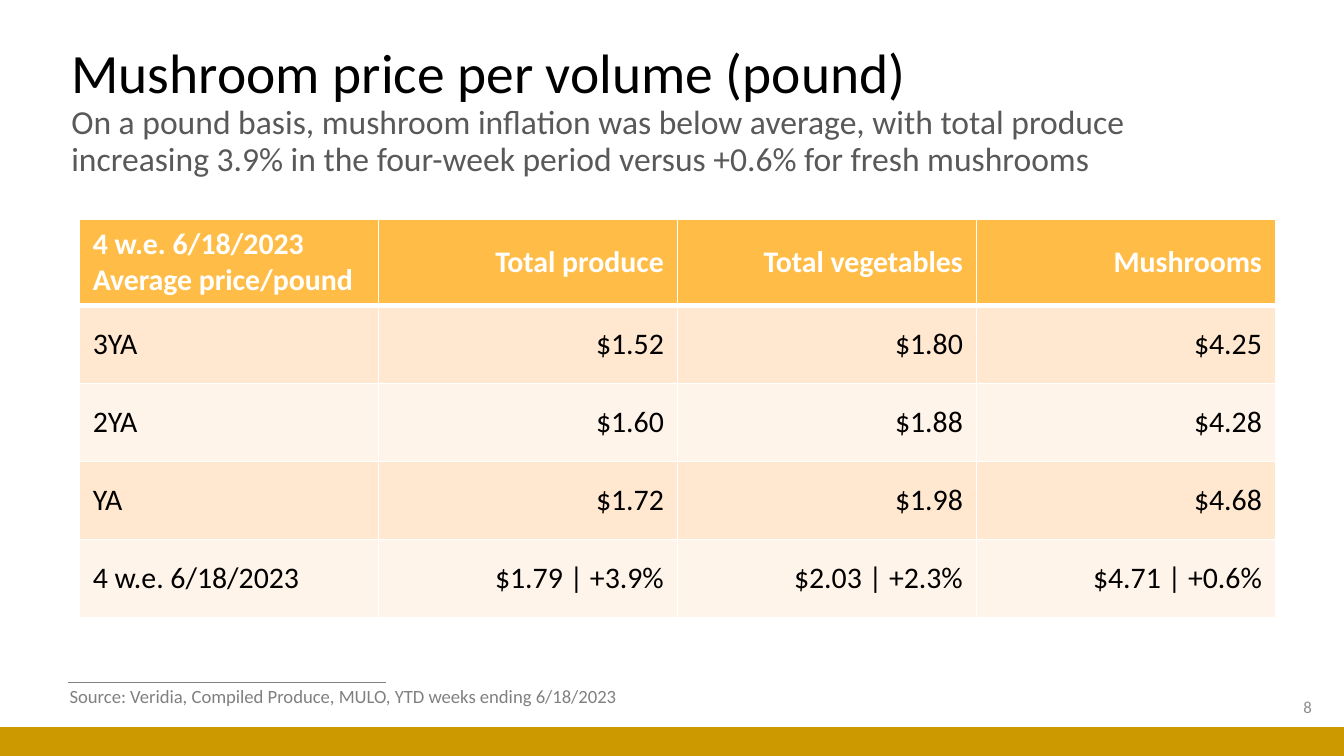
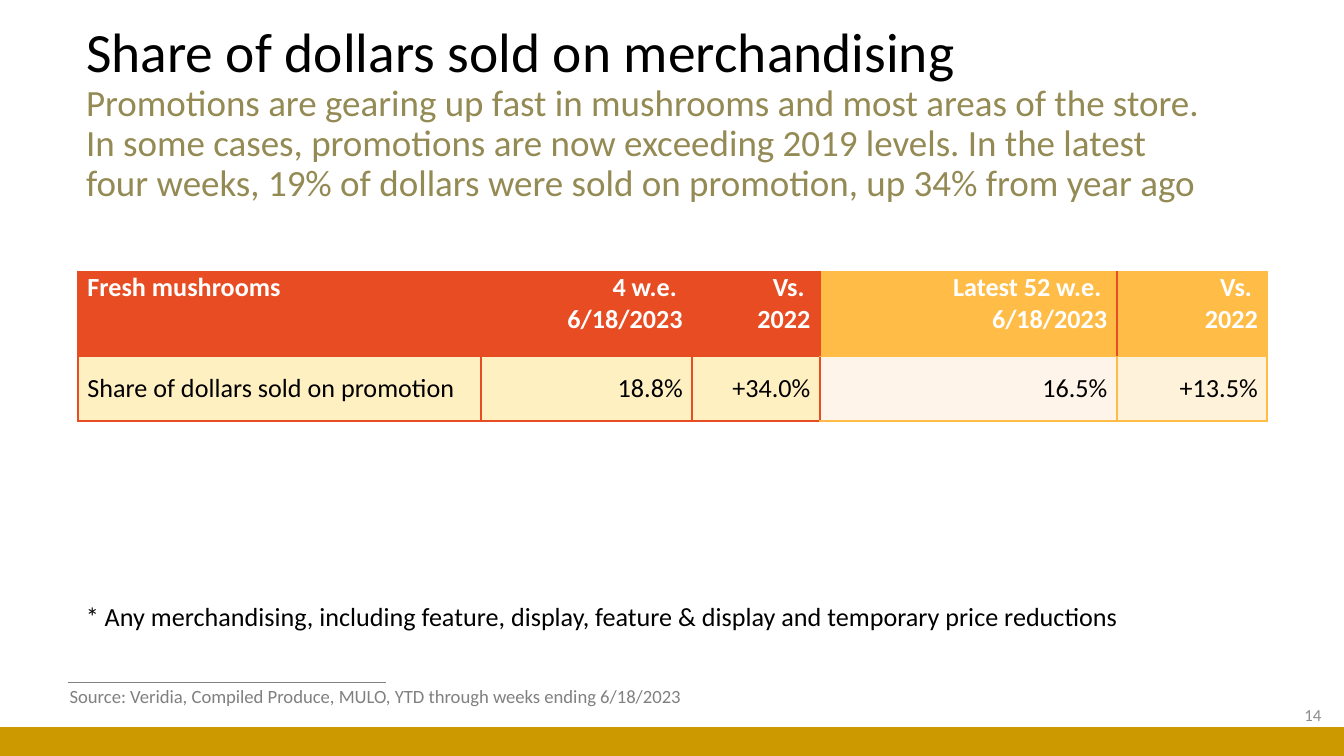
from lxml import etree
from pptx import Presentation
from pptx import util as u
from pptx.dml import color
from pptx.enum import shapes, text
from pptx.oxml import ns

FONT = "Calibri"
COLORS = {
    "black": "000000",
    "white": "FFFFFF",
    "source": "808080",
    "number": "8C8C8C",
    "band": "CC9900",
    "subtitle": "595959",
    "olive": "948A54",
    "amber": "FFBD47",
    "red": "E84C22",
    "peach": "FFE8CF",
    "cream": "FFF4E9",
    "yellow": "FFF0C2",
    "sand": "FFF2DA",
}
TITLE_SIZE = 29.7
LEFT, RIGHT = text.PP_ALIGN.LEFT, text.PP_ALIGN.RIGHT
TOP, MIDDLE = text.MSO_ANCHOR.TOP, text.MSO_ANCHOR.MIDDLE


def rgb(name):
    return color.RGBColor.from_string(COLORS[name])


def style_font(font, size, color_name, bold=False):
    font.name = FONT
    font.size = u.Pt(size)
    font.bold = bold
    font.color.rgb = rgb(color_name)


def fill_text(frame, wording, size, color_name, align=LEFT, bold=False):
    frame.text = wording
    for para in frame.paragraphs:
        para.alignment = align
        for span in para.runs:
            style_font(span.font, size, color_name, bold)


def add_text(page, place, wording, size, color_name, align=LEFT, wrap=False, anchor=TOP):
    box = page.shapes.add_textbox(*map(u.Pt, place))
    frame = box.text_frame
    frame.word_wrap = wrap
    frame.vertical_anchor = anchor
    if not wrap:
        frame.auto_size = text.MSO_AUTO_SIZE.SHAPE_TO_FIT_TEXT
    fill_text(frame, wording, size, color_name, align)


def set_title(page, place, headline, sublines, size, color_name):
    title = page.shapes.title
    title.left, title.top, title.width, title.height = map(u.Pt, place)
    frame = title.text_frame
    frame.word_wrap = True
    frame.auto_size = text.MSO_AUTO_SIZE.NONE
    frame.vertical_anchor = MIDDLE
    para = frame.paragraphs[0]
    para.alignment = LEFT
    para.line_spacing = 0.9
    span = para.add_run()
    span.text = headline
    style_font(span.font, TITLE_SIZE, "black")
    for line in sublines:
        para.add_line_break()
        span = para.add_run()
        span.text = line
        style_font(span.font, size, color_name)
    for line_break in para._p.findall(ns.qn("a:br")):
        etree.SubElement(line_break, ns.qn("a:rPr"), sz=str(int(size * 100)))


def add_footer(page, source, source_width, number, number_place):
    rule = page.shapes.add_connector(
        shapes.MSO_CONNECTOR.STRAIGHT, u.Pt(36.7), u.Pt(365.8), u.Pt(206.6), u.Pt(365.8))
    rule.line.color.rgb = rgb("source")
    rule.line.width = u.Pt(0.5)
    etree.SubElement(rule._element.spPr, ns.qn("a:effectLst"))
    band = page.shapes.add_shape(
        shapes.MSO_SHAPE.RECTANGLE, 0, u.Pt(389.5), u.Pt(720), u.Pt(15.5))
    band.shadow.inherit = False
    band.fill.solid()
    band.fill.fore_color.rgb = rgb("band")
    band.line.fill.background()
    add_text(page, (30.2, 363.6, source_width, 19.4), source, 10, "source")
    add_text(page, (*number_place, 162, 21.6), number, 9, "number", RIGHT, True, MIDDLE)


def set_borders(cell, edges):
    properties = cell._tc.get_or_add_tcPr()
    for side, (color_name, width) in zip("LRTB", edges):
        line = etree.SubElement(properties, ns.qn(f"a:ln{side}"), w=str(u.Pt(width)))
        fill = etree.SubElement(line, ns.qn("a:solidFill"))
        etree.SubElement(fill, ns.qn("a:srgbClr"), val=COLORS[color_name])


def add_grid(page, origin, widths, heights, rows, size, fill_of, edges_of,
             header_anchor=MIDDLE, margins=(7.2, 3.6)):
    frame = page.shapes.add_table(
        len(rows), len(widths), *map(u.Pt, (*origin, sum(widths), sum(heights))))
    table = frame.table
    table.first_row = table.horz_banding = False
    for column, width in zip(table.columns, widths):
        column.width = u.Pt(width)
    for r, (height, wordings) in enumerate(zip(heights, rows)):
        table.rows[r].height = u.Pt(height)
        header = r == 0
        for c, wording in enumerate(wordings):
            cell = table.cell(r, c)
            cell.margin_left = cell.margin_right = u.Pt(margins[0])
            cell.margin_top = cell.margin_bottom = u.Pt(margins[1])
            cell.vertical_anchor = header_anchor if header else MIDDLE
            fill_text(cell.text_frame, wording, size, "white" if header else "black",
                      RIGHT if c else LEFT, header)
            set_borders(cell, edges_of(r, c))
            cell.fill.solid()
            cell.fill.fore_color.rgb = rgb(fill_of(r, c))


def price_fill(row, col):
    if row == 0:
        return "amber"
    return "peach" if row % 2 else "cream"


def price_edges(row, col):
    top = 3 if row == 1 else 1
    bottom = 3 if row == 0 else 1
    return [("white", width) for width in (1, 1, top, bottom)]


def share_fill(row, col):
    if row == 0:
        return "red" if col < 3 else "amber"
    return "yellow" if col < 3 else ("cream", "sand")[col - 3]


def share_edges(row, col):
    def upright(edge):
        return "red" if edge < 4 or (row == 0 and edge == 4) else "amber"

    level = "red" if col < 3 else "amber"
    return [(name, 1) for name in (upright(col), upright(col + 1), level, level)]


def build_price_page(deck):
    page = deck.slides.add_slide(deck.slide_layouts[5])
    set_title(page, (31, 25.9, 679, 68.4), "Mushroom price per volume (pound)", [
        "On a pound basis, mushroom inflation was below average, with total produce",
        "increasing 3.9% in the four-week period versus +0.6% for fresh mushrooms",
    ], 18, "subtitle")
    rows = [
        ["4 w.e. 6/18/2023\nAverage price/pound", "Total produce", "Total vegetables", "Mushrooms"],
        ["3YA", "$1.52", "$1.80", "$4.25"],
        ["2YA", "$1.60", "$1.88", "$4.28"],
        ["YA", "$1.72", "$1.98", "$4.68"],
        ["4 w.e. 6/18/2023", "$1.79 | +3.9%", "$2.03 | +2.3%", "$4.71 | +0.6%"],
    ]
    add_grid(page, (42.5, 117.4), [160.2] * 4, [42.5] + [41.8] * 4, rows, 16,
             price_fill, price_edges)
    add_footer(page, "Source: Veridia, Compiled Produce, MULO, YTD weeks ending 6/18/2023",
               310.3, "8", (547.9, 367.9))


def build_share_page(deck):
    page = deck.slides.add_slide(deck.slide_layouts[5])
    set_title(page, (38.9, 22.3, 615.6, 78.5), "Share of dollars sold on merchandising", [
        "Promotions are gearing up fast in mushrooms and most areas of the store. "
        "In some cases, promotions are now exceeding 2019 levels. In the latest "
        "four weeks, 19% of dollars were sold on promotion, up 34% from year ago",
    ], 19.8, "olive")
    rows = [
        ["Fresh mushrooms", "4 w.e. \n6/18/2023", "Vs. \n2022",
         "Latest 52 w.e. \n6/18/2023", "Vs. \n2022"],
        ["Share of dollars sold on promotion", "18.8%", "+34.0%", "16.5%", "+13.5%"],
    ]
    add_grid(page, (41.8, 145.5), [216, 113, 68.4, 159.1, 80.6], [45.6, 34.4], rows, 14,
             share_fill, share_edges, TOP, (5, 0))
    add_text(page, (38.9, 318.2, 583.2, 24.5),
             "* Any merchandising, including feature, display, feature & display "
             "and temporary price reductions", 14, "black")
    add_footer(page, "Source: Veridia, Compiled Produce, MULO, YTD through weeks ending 6/18/2023",
               346.3, "14", (553, 372.2))


def main():
    deck = Presentation()
    deck.slide_width, deck.slide_height = u.Pt(720), u.Pt(405)
    build_price_page(deck)
    build_share_page(deck)
    deck.save("out.pptx")


if __name__ == "__main__":
    main()
